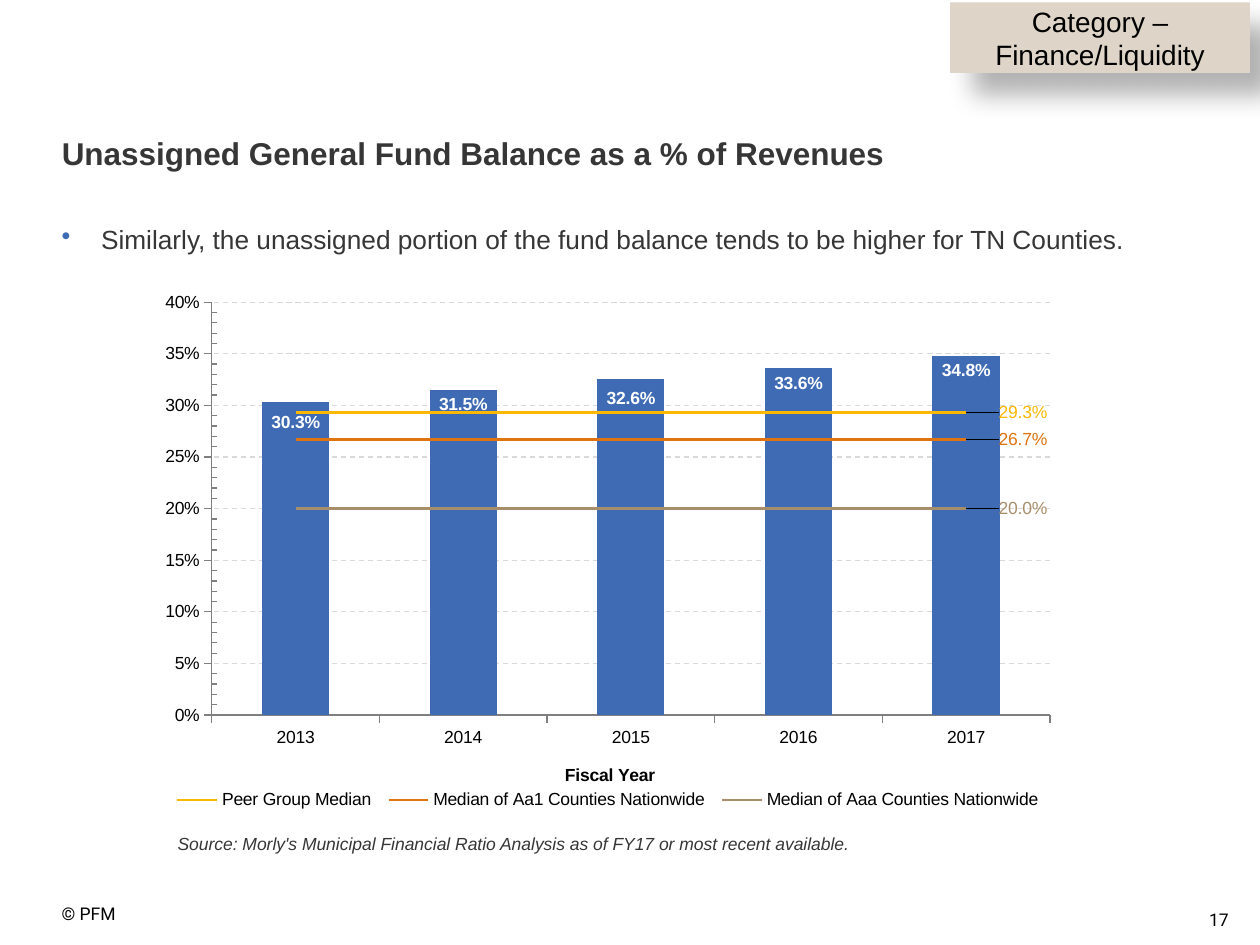
from dataclasses import dataclass

from lxml.etree import SubElement
from pptx import Presentation
from pptx.chart.data import CategoryChartData
from pptx.dml.color import RGBColor
from pptx.enum.chart import XL_CHART_TYPE as ChartType
from pptx.enum.chart import XL_LABEL_POSITION as LabelPos
from pptx.enum.chart import XL_LEGEND_POSITION as LegendPos
from pptx.enum.chart import XL_MARKER_STYLE as Marker
from pptx.enum.chart import XL_TICK_LABEL_POSITION as TickLabels
from pptx.enum.chart import XL_TICK_MARK as Tick
from pptx.enum.dml import MSO_LINE
from pptx.enum.shapes import MSO_SHAPE
from pptx.enum.text import MSO_ANCHOR, PP_ALIGN
from pptx.oxml import parse_xml
from pptx.oxml.ns import nsdecls, qn
from pptx.util import Pt

BLACK = RGBColor(0, 0, 0)
WHITE = RGBColor(255, 255, 255)
INK = RGBColor(0x37, 0x36, 0x37)
BLUE = RGBColor(0x3E, 0x6B, 0xB4)
YELLOW = RGBColor(0xFC, 0xB8, 0x00)
ORANGE = RGBColor(0xDE, 0x73, 0x0F)
TAN = RGBColor(0xA6, 0x8E, 0x6A)
SAND = RGBColor(0xDE, 0xD5, 0xC8)
GRID = RGBColor(0xD9, 0xD9, 0xD9)
AXIS = RGBColor(0x7F, 0x7F, 0x7F)
YEARS = ("2013", "2014", "2015", "2016", "2017")
BALANCES = (0.303, 0.315, 0.326, 0.336, 0.348)


@dataclass(frozen=True)
class Median:
    name: str
    value: float
    color: RGBColor


@dataclass(frozen=True)
class Note:
    text: str
    box: tuple
    size: int
    font: str = "Arial"
    color: RGBColor = INK
    insets: tuple = (0, 0, 0, 0)
    align: PP_ALIGN = PP_ALIGN.LEFT
    italic: bool = False
    wrap: bool = True


MEDIANS = (Median("Peer Group Median", 0.293, YELLOW),
           Median("Median of Aa1 Counties Nationwide", 0.267, ORANGE),
           Median("Median of Aaa Counties Nationwide", 0.2, TAN))
# Shifts of the first bar labels, as fractions of the chart's width and height
BAR_LABEL_SHIFTS = ((0, 0.01), (0, 0), (0, 0.01))

COPYRIGHT = Note("© PFM", (35.3, 516.2, 100, 19.4), 10, "Roboto", BLACK, wrap=False)
PAGE = Note("17", (493.2, 516.2, 216, 28.8), 10, "Roboto", BLACK,
            (7.2, 3.6, 7.2, 3.6), PP_ALIGN.RIGHT)
SOURCE = Note("Source: Morly's Municipal Financial Ratio Analysis as of FY17 or most recent available.",
              (95, 473, 607.7, 18.7), 10, insets=(6.5, 2.9, 6.5, 2.9), italic=True)
FINDING = Note("Similarly, the unassigned portion of the fund balance tends to be higher for TN Counties.",
               (35.3, 115.2, 624.2, 324), 15, insets=(0, 3.6, 7.2, 3.6))
HEADING = Note("Unassigned General Fund Balance as a % of Revenues",
               (35.3, 79.2, 620.6, 20.2), 18)
CATEGORY = Note("Category – Finance/Liquidity", (542.9, 1.4, 171.4, 40.3), 16,
                color=BLACK, align=PP_ALIGN.CENTER)


def points(values: tuple) -> list:
    return [Pt(value) for value in values]


def fill_text(shape, note: Note):
    """Write the note into the shape and return its paragraph."""
    frame = shape.text_frame
    frame.text = note.text
    frame.word_wrap = note.wrap
    (frame.margin_left, frame.margin_top,
     frame.margin_right, frame.margin_bottom) = points(note.insets)
    paragraph = frame.paragraphs[0]
    paragraph.alignment = note.align
    font = paragraph.runs[0].font
    font.name, font.size, font.italic = note.font, Pt(note.size), note.italic
    font.color.rgb = note.color
    return paragraph


def add_note(slide, note: Note):
    return fill_text(slide.shapes.add_textbox(*points(note.box)), note)


def add_heading(slide) -> None:
    title = slide.shapes.title
    title.left, title.top, title.width, title.height = points(HEADING.box)
    paragraph = fill_text(title, HEADING)
    title.text_frame.vertical_anchor = MSO_ANCHOR.TOP
    paragraph.line_spacing = 0.9
    paragraph.runs[0].font.bold = True


def add_finding(slide) -> None:
    paragraph = add_note(slide, FINDING)
    paragraph.line_spacing = 1.5
    properties = paragraph._p.get_or_add_pPr()
    properties.set("marL", str(Pt(22.5)))
    properties.set("indent", str(-Pt(22.5)))
    color = SubElement(properties, qn("a:buClr"))
    SubElement(color, qn("a:srgbClr"), val=str(BLUE))
    SubElement(properties, qn("a:buChar"), char="•")


def add_category(slide) -> None:
    tag = slide.shapes.add_shape(MSO_SHAPE.RECTANGLE, *points(CATEGORY.box))
    tag.fill.solid()
    tag.fill.fore_color.rgb = SAND
    tag.line.fill.background()
    tag.shadow.inherit = False
    fill_text(tag, CATEGORY)
    tag.text_frame.vertical_anchor = MSO_ANCHOR.MIDDLE
    effects = tag._element.spPr.find(qn("a:effectLst"))
    shadow = SubElement(effects, qn("a:outerShdw"), blurRad=str(Pt(15)),
                        dist=str(Pt(18)), dir=str(45 * 60000), rotWithShape="0")
    color = SubElement(shadow, qn("a:srgbClr"), val=str(BLACK))
    SubElement(color, qn("a:alpha"), val="30000")


def set_layout(parent, x: float, y: float, size: tuple = (), after: str = "",
               shift: bool = False, inner: bool = False) -> None:
    """Place a chart part by fractions of the chart; its layout goes behind the child named by after."""
    settings = [("layoutTarget", "inner")] if inner else []
    if not shift:
        settings += [("xMode", "edge"), ("yMode", "edge")]
    settings += [("x", x), ("y", y), *zip(("w", "h"), size)]
    layout = parse_xml(f"<c:layout {nsdecls('c')}><c:manualLayout/></c:layout>")
    for tag, value in settings:
        SubElement(layout[0], qn(f"c:{tag}"), val=str(value))
    for old in parent.findall(qn("c:layout")):
        parent.remove(old)
    before = parent.find(qn(after)) if after else None
    parent.insert(0 if before is None else parent.index(before) + 1, layout)


def format_label(series, index: int, color: RGBColor, position, shift: tuple, bold: bool) -> None:
    label = series.points[index].data_label
    label.font.size, label.font.bold = Pt(10), bold
    label.font.color.rgb = color
    label.position = position
    element = series._element.find(qn("c:dLbls")).findall(qn("c:dLbl"))[-1]
    set_layout(element, *shift, after="c:idx", shift=True)


def move_medians_to_lines(chart) -> None:
    bars = chart.plots[0]._element
    lines = parse_xml(f'<c:lineChart {nsdecls("c")}><c:grouping val="standard"/>'
                      '<c:varyColors val="0"/></c:lineChart>')
    for series in bars.findall(qn("c:ser"))[1:]:
        for bar_only in series.findall(qn("c:invertIfNegative")):
            series.remove(bar_only)
        lines.append(series)
    SubElement(lines, qn("c:marker"), val="1")
    for axis in bars.findall(qn("c:axId")):
        SubElement(lines, qn("c:axId"), val=axis.get("val"))
    bars.addnext(lines)


def format_series(chart) -> None:
    bar_plot, line_plot = chart.plots
    bar_plot.gap_width, bar_plot.overlap = 150, 100
    bar_plot.vary_by_categories = False
    bars = bar_plot.series[0]
    bars.format.fill.solid()
    bars.format.fill.fore_color.rgb = BLUE
    labels = bars.data_labels
    labels.show_value = True
    labels.number_format, labels.number_format_is_linked = "0.0%", False
    labels.position = LabelPos.INSIDE_END
    labels.font.size, labels.font.bold = Pt(10), True
    labels.font.color.rgb = WHITE
    for index, shift in enumerate(BAR_LABEL_SHIFTS):
        format_label(bars, index, WHITE, LabelPos.INSIDE_END, shift, True)
    for series, median in zip(line_plot.series, MEDIANS):
        series.smooth = False
        series.marker.style = Marker.NONE
        series.format.line.color.rgb = median.color
        series.format.line.width = Pt(1.5)
        format_label(series, len(YEARS) - 1, median.color, LabelPos.RIGHT, (0.03, 0), False)


def format_axes(chart) -> None:
    years, shares = chart.category_axis, chart.value_axis
    for axis in (years, shares):
        axis.major_tick_mark = Tick.OUTSIDE
        axis.format.line.color.rgb = AXIS
        axis.format.line.width = Pt(0.75)
    years.tick_label_position = TickLabels.LOW
    title = years.axis_title
    title.text_frame.text = "Fiscal Year"
    font = title.text_frame.paragraphs[0].runs[0].font
    font.name, font.size, font.bold = "Arial", Pt(10), True
    font.color.rgb = BLACK
    set_layout(title._element, 0.45, 0.85, after="c:tx")
    shares.minimum_scale, shares.maximum_scale = 0, 0.4
    shares.major_unit, shares.minor_unit = 0.05, 0.01
    shares.minor_tick_mark = Tick.INSIDE
    shares.tick_labels.number_format = "0%"
    shares.tick_labels.number_format_is_linked = False
    shares.has_major_gridlines = True
    grid = shares.major_gridlines.format.line
    grid.color.rgb, grid.width, grid.dash_style = GRID, Pt(0.75), MSO_LINE.DASH


def format_legend(chart) -> None:
    chart.has_legend = True
    chart.legend.position = LegendPos.BOTTOM
    chart.legend.include_in_layout = False
    legend = chart.legend._element
    set_layout(legend, 0.02, 0.89, (0.96, 0.06), after="c:legendPos")
    hidden = parse_xml(f'<c:legendEntry {nsdecls("c")}><c:idx val="0"/>'
                       '<c:delete val="1"/></c:legendEntry>')
    legend.find(qn("c:layout")).addprevious(hidden)


def add_balance_chart(slide) -> None:
    data = CategoryChartData(number_format="0.0%")
    data.categories = YEARS
    data.add_series("Series 1", BALANCES)
    for median in MEDIANS:
        data.add_series(median.name, [median.value] * len(YEARS))
    box = points((84.2, 159.8, 526.3, 323.3))
    chart = slide.shapes.add_chart(ChartType.COLUMN_STACKED, *box, data).chart
    chart.has_title = False
    chart.font.name, chart.font.size = "Arial", Pt(10)
    chart.font.color.rgb = BLACK
    move_medians_to_lines(chart)
    format_series(chart)
    format_axes(chart)
    format_legend(chart)
    plot_area = chart._chartSpace.find(qn("c:chart")).find(qn("c:plotArea"))
    set_layout(plot_area, 0.07, 0.04, (0.91, 0.73), inner=True)


def main() -> None:
    deck = Presentation()
    deck.slide_width, deck.slide_height = Pt(720), Pt(540)
    slide = deck.slides.add_slide(deck.slide_layouts[5])
    add_heading(slide)
    for note in (COPYRIGHT, PAGE, SOURCE):
        add_note(slide, note)
    add_balance_chart(slide)
    add_finding(slide)
    add_category(slide)
    deck.save("out.pptx")


if __name__ == "__main__":
    main()
